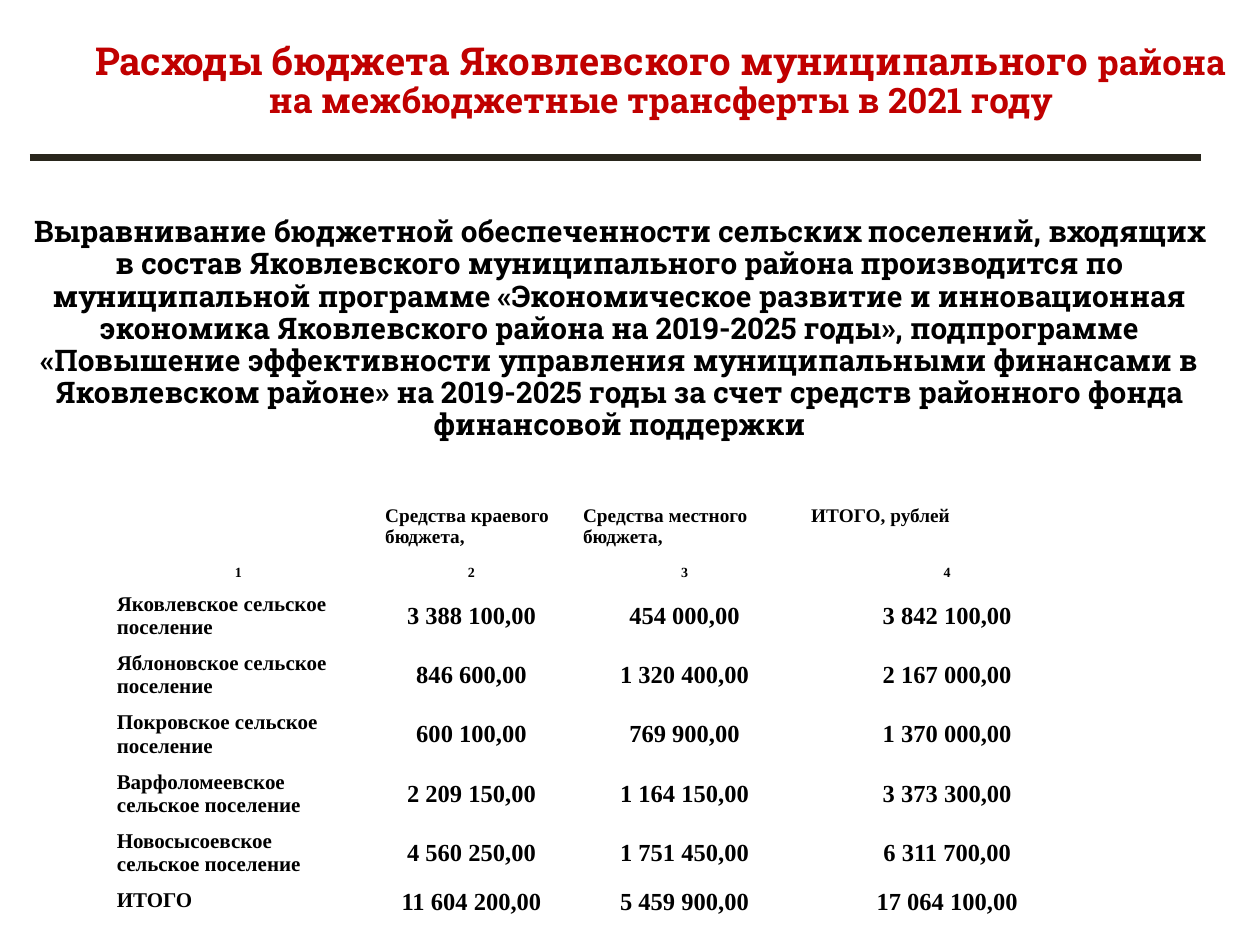
from lxml.etree import SubElement
from pptx import Presentation
from pptx.dml.color import RGBColor
from pptx.enum.shapes import MSO_CONNECTOR
from pptx.enum.text import MSO_ANCHOR, MSO_AUTO_SIZE, PP_ALIGN
from pptx.oxml.ns import qn
from pptx.util import Cm, Pt

COLORS = {"heading": "C00000", "text": "000000", "rule": "29261C", "paper": "FFFFFF"}
HEADING_FONT, TABLE_FONT = "Roboto Slab", "Times New Roman"

HEADING = [("Расходы бюджета Яковлевского муниципального ", 22),
           ("района на межбюджетные трансферты в 2021 году", 20)]
EXPLANATION = (
    "Выравнивание бюджетной обеспеченности сельских поселений, входящих в состав "
    "Яковлевского муниципального района производится по муниципальной программе "
    "«Экономическое развитие и инновационная экономика Яковлевского района на "
    "2019-2025 годы», подпрограмме «Повышение эффективности управления "
    "муниципальными финансами в Яковлевском районе» на 2019-2025 годы за счет "
    "средств районного фонда финансовой поддержки")
TRANSFERS = [
    ("", "Средства краевого бюджета,", "Средства местного бюджета,", "ИТОГО, рублей"),
    ("1", "2", "3", "4"),
    ("Яковлевское сельское поселение", "3 388 100,00", "454 000,00", "3 842 100,00"),
    ("Яблоновское сельское поселение", "846 600,00", "1 320 400,00", "2 167 000,00"),
    ("Покровское сельское поселение", "600 100,00", "769 900,00", "1 370 000,00"),
    ("Варфоломеевское сельское поселение", "2 209 150,00", "1 164 150,00", "3 373 300,00"),
    ("Новосысоевское сельское поселение", "4 560 250,00", "1 751 450,00", "6 311 700,00"),
    ("ИТОГО", "11 604 200,00", "5 459 900,00", "17 064 100,00"),
]
COLUMN_WIDTHS = [5.41, 3.99, 4.6, 5.99]
ROW_HEIGHTS = [1.19, 0.41, 1.14, 1.14, 1.14, 1.14, 1.19, 0.66]


def color(name):
    return RGBColor.from_string(COLORS[name])


def style(paragraph, font, ink, align, size=None):
    paragraph.alignment = align
    paragraph.font.name = font
    paragraph.font.bold = True
    paragraph.font.color.rgb = color(ink)
    if size:
        paragraph.font.size = Pt(size)


def place(holder, left, top, width, height):
    """Move a placeholder into its box and return its single paragraph."""
    holder.left, holder.top = Cm(left), Cm(top)
    holder.width, holder.height = Cm(width), Cm(height)
    frame = holder.text_frame
    frame.word_wrap = True
    frame.auto_size = MSO_AUTO_SIZE.NONE
    frame.vertical_anchor = MSO_ANCHOR.MIDDLE
    paragraph = frame.paragraphs[0]
    paragraph.space_before = Pt(0)
    paragraph.line_spacing = 0.9
    return paragraph


def add_heading(slide, left, top, width, height):
    heading = place(slide.shapes.title, left, top, width, height)
    style(heading, HEADING_FONT, "heading", PP_ALIGN.CENTER)
    for words, size in HEADING:
        run = heading.add_run()
        run.text = words
        run.font.size = Pt(size)


def add_rule(slide, left, top, width):
    rule = slide.shapes.add_connector(
        MSO_CONNECTOR.STRAIGHT, Cm(left), Cm(top), Cm(left + width), Cm(top))
    rule.line.color.rgb = color("rule")
    rule.line.width = Pt(3.75)
    SubElement(rule._element.spPr, qn("a:effectLst"))


def add_explanation(slide, left, top, width, height):
    explanation = place(slide.placeholders[1], left, top, width, height)
    explanation.text = EXPLANATION
    style(explanation, HEADING_FONT, "text", PP_ALIGN.CENTER, 17)
    # Plain paragraph: no bullet, no hanging indent
    properties = explanation._p.get_or_add_pPr()
    properties.set("marL", "0")
    properties.set("indent", "0")
    bullet_off = properties.makeelement(qn("a:buNone"), {})
    properties.insert_element_before(bullet_off, "a:tabLst", "a:defRPr", "a:extLst")


def add_borders(cell, bottom_width):
    properties = cell._tc.get_or_add_tcPr()
    widths = {"a:lnL": 1, "a:lnR": 1, "a:lnT": 1, "a:lnB": bottom_width}
    for position, (side, width) in enumerate(widths.items()):
        border = properties.makeelement(qn(side), {"w": str(Pt(width))})
        fill = SubElement(border, qn("a:solidFill"))
        SubElement(fill, qn("a:srgbClr"), val=COLORS["paper"])
        properties.insert(position, border)


def cell_look(row, column):
    """Size, alignment and anchor by the cell's role in the table."""
    if row == 0:
        return 11, PP_ALIGN.LEFT, MSO_ANCHOR.TOP
    if row == 1:
        return 8, PP_ALIGN.CENTER, MSO_ANCHOR.MIDDLE
    if column == 0:
        return 12, PP_ALIGN.LEFT, MSO_ANCHOR.TOP
    return 14, PP_ALIGN.CENTER, MSO_ANCHOR.MIDDLE


def add_transfers(slide, left, top, width, height):
    table = slide.shapes.add_table(
        len(TRANSFERS), len(COLUMN_WIDTHS),
        Cm(left), Cm(top), Cm(width), Cm(height)).table
    for column, column_width in zip(table.columns, COLUMN_WIDTHS):
        column.width = Cm(column_width)
    for row, row_height in zip(table.rows, ROW_HEIGHTS):
        row.height = Cm(row_height)
    for r, entries in enumerate(TRANSFERS):
        for c, entry in enumerate(entries):
            cell = table.cell(r, c)
            size, align, cell.vertical_anchor = cell_look(r, c)
            cell.text = entry
            style(cell.text_frame.paragraphs[0], TABLE_FONT, "text", align, size)
            cell.fill.solid()
            cell.fill.fore_color.rgb = color("paper")
            add_borders(cell, 3 if r == 0 else 1)


def main():
    deck = Presentation()
    deck.slide_width, deck.slide_height = Cm(25.4), Cm(19.05)
    slide = deck.slides.add_slide(deck.slide_layouts[1])
    slide.background.fill.solid()
    slide.background.fill.fore_color.rgb = color("paper")

    add_heading(slide, 1.22, 1, 24.18, 1.3)
    add_rule(slide, 0.6, 3.17, 23.62)
    add_explanation(slide, 0.4, 3.76, 24.18, 5.77)
    add_transfers(slide, 2.1, 10.06, sum(COLUMN_WIDTHS), sum(ROW_HEIGHTS))
    deck.save("out.pptx")


if __name__ == "__main__":
    main()
